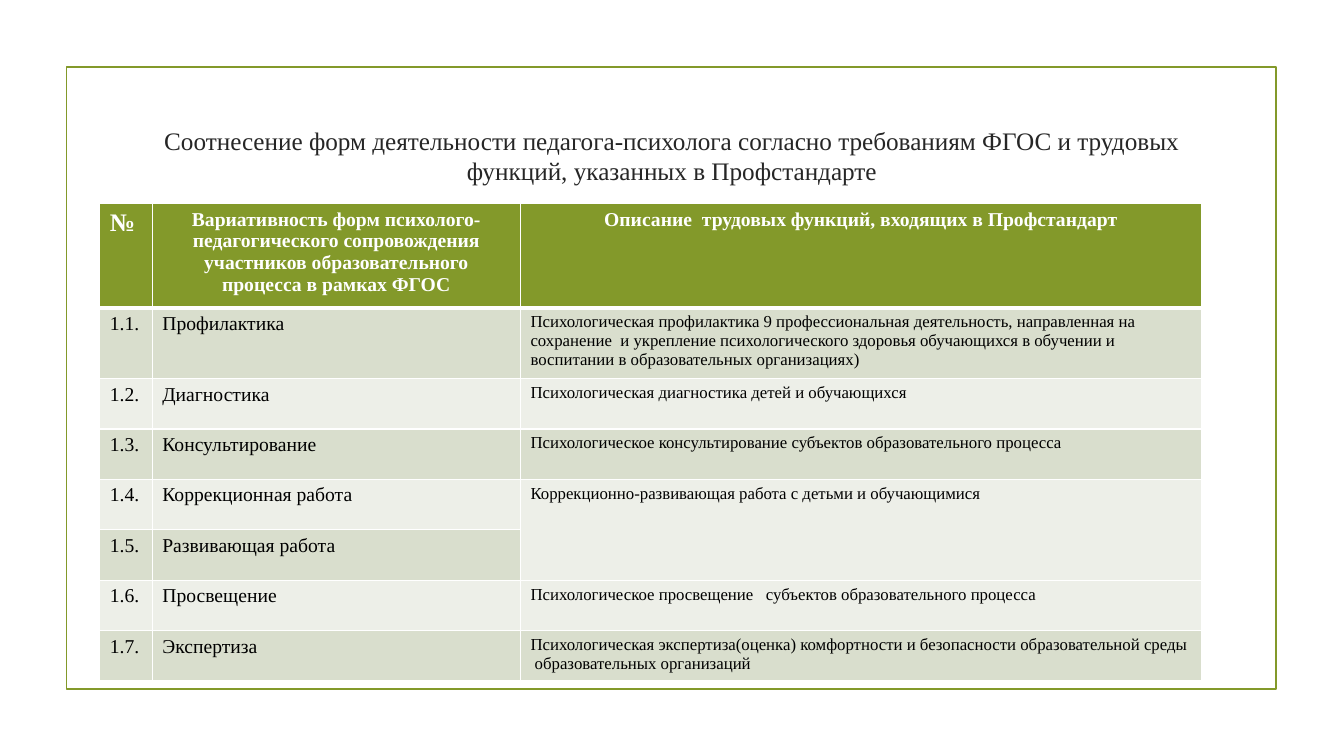
from lxml.etree import SubElement
from pptx import Presentation
from pptx.dml.color import RGBColor
from pptx.enum.shapes import MSO_SHAPE
from pptx.enum.text import MSO_ANCHOR, PP_ALIGN
from pptx.oxml import parse_xml
from pptx.oxml.ns import nsdecls, qn
from pptx.util import Pt

GREEN = RGBColor(0x83, 0x99, 0x2A)
DARK = RGBColor(0xD9, 0xDE, 0xCD)
LIGHT = RGBColor(0xED, 0xEF, 0xE8)
WHITE = RGBColor(0xFF, 0xFF, 0xFF)
BLACK = RGBColor(0x00, 0x00, 0x00)
GREY = RGBColor(0x26, 0x26, 0x26)

TITLE = ("Соотнесение форм деятельности педагога-психолога согласно требованиям "
         "ФГОС и трудовых функций, указанных в Профстандарте")
HEADS = [
    "№",
    "Вариативность форм психолого-педагогического сопровождения участников "
    "образовательного процесса в рамках ФГОС",
    "Описание  трудовых функций, входящих в Профстандарт",
]
FORMS = [
    ("Профилактика",
     "Психологическая профилактика 9 профессиональная деятельность, направленная на "
     "сохранение  и укрепление психологического здоровья обучающихся в обучении и "
     "воспитании в образовательных организациях)"),
    ("Диагностика", "Психологическая диагностика детей и обучающихся"),
    ("Консультирование",
     "Психологическое консультирование субъектов образовательного процесса"),
    ("Коррекционная работа", "Коррекционно-развивающая работа с детьми и обучающимися"),
    ("Развивающая работа", None),  # shares the description above
    ("Просвещение", "Психологическое просвещение   субъектов образовательного процесса"),
    ("Экспертиза",
     "Психологическая экспертиза(оценка) комфортности и безопасности образовательной "
     "среды  образовательных организаций"),
]
COLS = [37.5, 263, 486.5]
ROWS = [68.5, 47] + [36] * 6


def write(frame, text, size=14, color=BLACK, bold=False, align=PP_ALIGN.LEFT):
    para = frame.paragraphs[0]
    para.alignment = align
    run = para.add_run()
    run.text = text
    font = run.font
    font.name = "Times New Roman"
    font.size = Pt(size)
    font.bold = bold
    font.color.rgb = color


def edge(cell, below=1):
    """Draw white borders on a cell; below is the width of the bottom one."""
    props = cell._tc.get_or_add_tcPr()
    for spot, (side, width) in enumerate(zip("LRTB", (1, 1, 1, below))):
        line = parse_xml(f'<a:ln{side} {nsdecls("a")} w="{Pt(width)}"/>')
        fill = SubElement(line, qn("a:solidFill"))
        SubElement(fill, qn("a:srgbClr"), val=str(WHITE))
        props.insert(spot, line)


class Page:
    def __init__(self, deck):
        self.slide = deck.slides.add_slide(deck.slide_layouts[6])
        self.shapes = self.slide.shapes

    def frame(self, *box):
        shape = self.shapes.add_shape(MSO_SHAPE.RECTANGLE, *map(Pt, box))
        shape.shadow.inherit = False
        shape.fill.background()
        shape.line.color.rgb = GREEN
        shape.line.width = Pt(1.25)

    def title(self, text, *box):
        frame = self.shapes.add_textbox(*map(Pt, box)).text_frame
        frame.word_wrap = True
        frame.vertical_anchor = MSO_ANCHOR.MIDDLE
        write(frame, text, size=18, color=GREY, align=PP_ALIGN.CENTER)

    def cell(self, cell, text, fill, below=1, **style):
        cell.fill.solid()
        cell.fill.fore_color.rgb = fill
        edge(cell, below)
        if text:
            write(cell.text_frame, text, **style)

    def table(self, left, top):
        box = map(Pt, (left, top, sum(COLS), sum(ROWS)))
        table = self.shapes.add_table(len(ROWS), len(COLS), *box).table
        for col, width in zip(table.columns, COLS):
            col.width = Pt(width)
        for row, height in zip(table.rows, ROWS):
            row.height = Pt(height)

        for col, text in enumerate(HEADS):
            self.cell(table.cell(0, col), text, GREEN, below=3,
                      size=14 if col else 18, color=WHITE, bold=True,
                      align=PP_ALIGN.CENTER if col else PP_ALIGN.LEFT)
        for row, (form, task) in enumerate(FORMS, 1):
            fill = DARK if row % 2 else LIGHT
            for col, text in enumerate((f"1.{row}.", form, task)):
                self.cell(table.cell(row, col), text, fill,
                          size=12 if col == 2 else 14)
            if task is None:
                table.cell(row - 1, 2).merge(table.cell(row, 2))


def main():
    deck = Presentation()
    deck.slide_width, deck.slide_height = Pt(960), Pt(540)
    page = Page(deck)
    page.frame(47.5, 48, 864, 444)
    page.title(TITLE, 102, 77, 756, 68.5)
    page.table(71.3, 145.5)
    deck.save("out.pptx")


if __name__ == "__main__":
    main()
